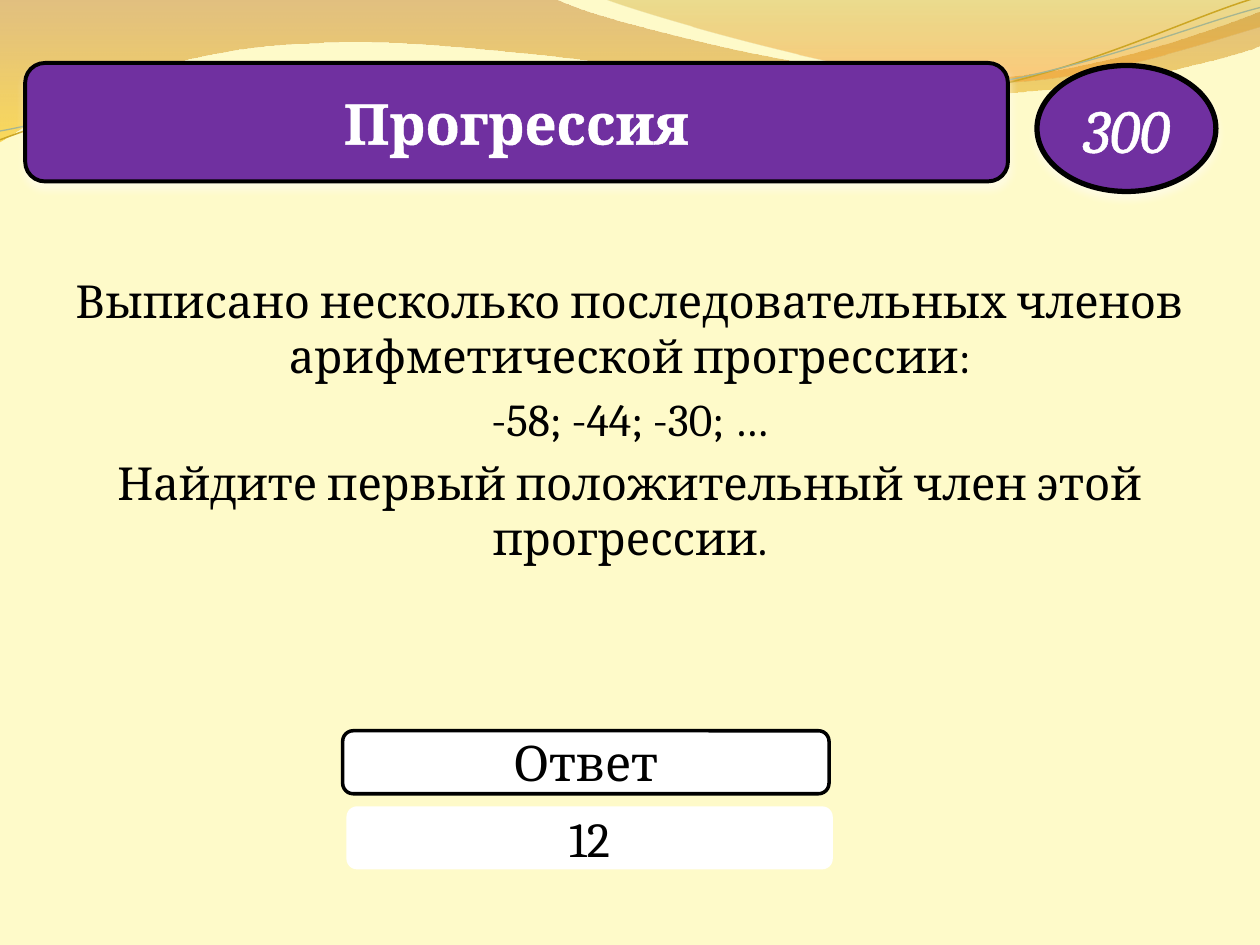
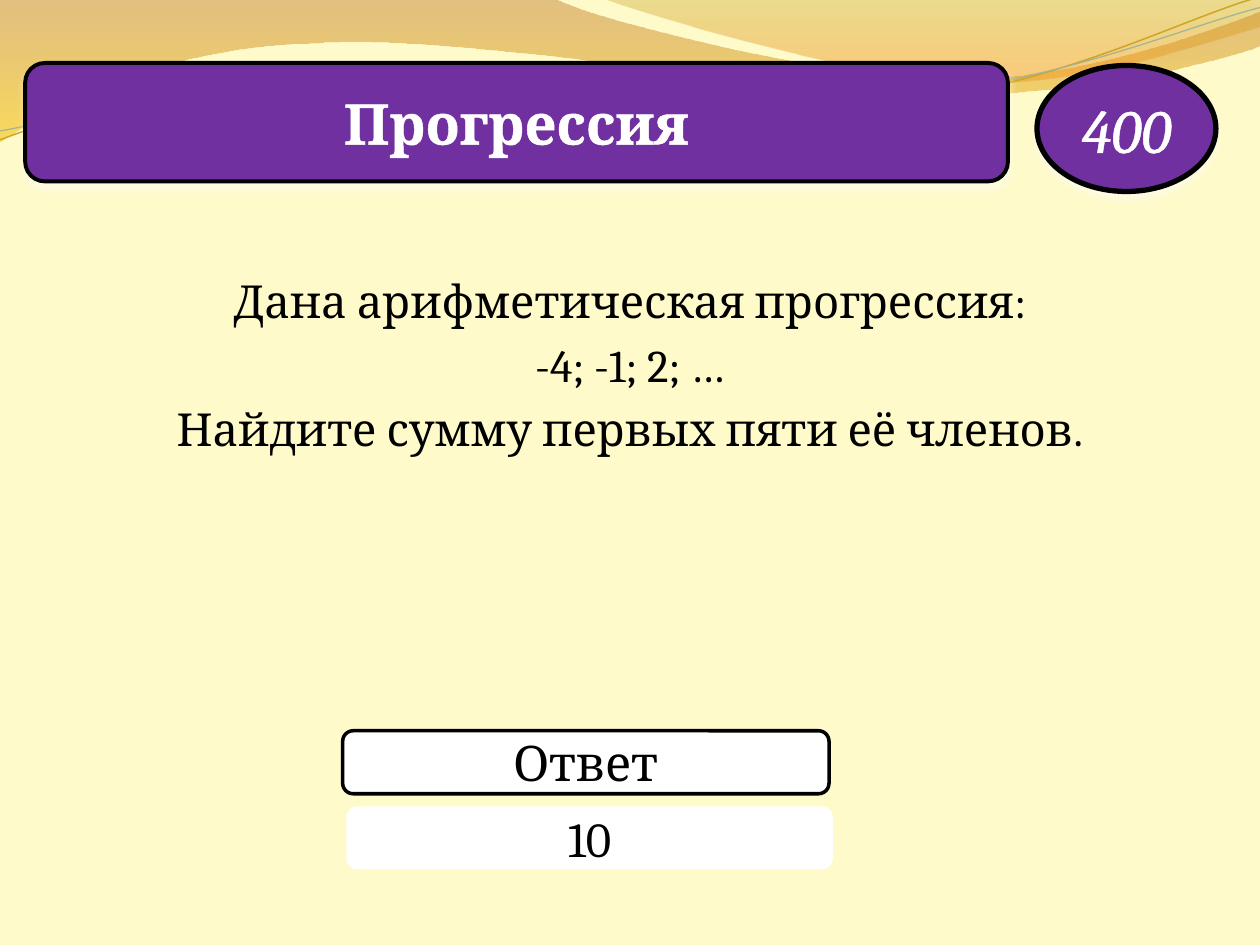
"""Builds two quiz slides about arithmetic progressions."""
from lxml import etree
from pptx import Presentation
from pptx.dml.color import RGBColor
from pptx.enum.shapes import MSO_SHAPE
from pptx.enum.text import MSO_ANCHOR, PP_ALIGN
from pptx.oxml.ns import qn
from pptx.util import Emu, Pt

PX = 9144
ROUNDED, ELLIPSE = MSO_SHAPE.ROUNDED_RECTANGLE, MSO_SHAPE.OVAL
CENTER, TOP, MIDDLE = PP_ALIGN.CENTER, MSO_ANCHOR.TOP, MSO_ANCHOR.MIDDLE
FONT = "Cambria"

COLORS = {
    "page": "FEFAC9", "purple": "7030A0", "white": "FFFFFF", "black": "000000",
    "brown": "C07A28", "yellow": "F7BF00", "olive": "C09709", "orange": "F59320",
    "gold": "CCA624", "sage": "A5B592",
}

TOPIC = "Прогрессия"
ANSWER_LABEL = "Ответ"
QUESTIONS = [
    {"points": "300", "answer": "12", "task": [
        "Выписано несколько последовательных членов арифметической прогрессии:",
        "-58; -44; -30; …",
        "Найдите первый положительный член этой прогрессии."]},
    {"points": "400", "answer": "10", "task": [
        "Дана арифметическая прогрессия:",
        "-4; -1; 2; …",
        "Найдите сумму первых пяти её членов."]},
]

TASK_BOX = (50, 212, 900, 480)
TOPIC_BOX = (20, 50, 780, 94)
POINTS_BOX = (823, 52, 142, 100)
LABEL_BOX = (272, 580, 386, 50)
ANSWER_BOX = (275, 640, 386, 50)

WAVES = [
    {"start": (0, 0),
     "segments": [(440, -1), (476, 17, 664, 63, 758, 63), (853, 63, 958, 26, 1000, 9),
                  (1001, 36), (983, 44, 870, 76, 746, 75), (622, 75, 382, 28, 257, 34),
                  (129, 36, 46, 83, -1, 113), (0, 0)],
     "stops": [(0, "brown", 45), (100, "yellow", 55)]},
    {"start": (479, -1),
     "segments": [(509, 11, 682, 62, 769, 65), (856, 69, 961, 32, 1000, 21), (1000, 0),
                  (479, -1)],
     "stops": [(0, "olive", 30), (80, "orange", 45)]},
]
STRANDS = [
    {"start": (0, 111), "color": "gold", "width": 0.85,
     "segments": [(48, 93, 158, 57, 277, 52), (395, 47, 593, 89, 713, 80),
                  (833, 71, 938, 15, 998, -2)]},
    {"start": (0, 104), "color": "sage", "width": 0.75,
     "segments": [(47, 96, 164, 61, 283, 56), (403, 51, 597, 84, 717, 75),
                  (836, 67, 941, 21, 1000, 6)]},
]


def rgb(name):
    return RGBColor.from_string(COLORS[name])


def emu(lengths):
    return [Emu(length * PX) for length in lengths]


def add_alpha(color_element, percent):
    etree.SubElement(color_element, qn("a:alpha"), val=str(percent * 1000))


def add_color(parent, name):
    return etree.SubElement(parent, qn("a:srgbClr"), val=COLORS[name])


def bend(outline, segments):
    corners = iter(list(outline.element.spPr.iter(qn("a:lnTo"))))
    for segment in segments:
        corner = next(corners)
        if len(segment) == 2:
            continue
        curve = etree.Element(qn("a:cubicBezTo"))
        corner.addprevious(curve)
        for handle in (corner, next(corners), next(corners)):
            curve.append(handle[0])
            handle.getparent().remove(handle)


def draw_outline(slide, part, close):
    segments = part["segments"]
    points = [segment[i:i + 2] for segment in segments for i in range(0, len(segment), 2)]
    builder = slide.shapes.build_freeform(*part["start"], scale=PX)
    builder.add_line_segments(points, close=close)
    outline = builder.convert_to_shape()
    bend(outline, segments)
    outline.shadow.inherit = False
    return outline


def draw_wave(slide, wave):
    band = draw_outline(slide, wave, True)
    band.line.fill.background()
    band.fill.gradient()
    band.fill.gradient_angle = 270
    for stop, (position, color, _) in zip(band.fill.gradient_stops, wave["stops"]):
        stop.position = position / 100
        stop.color.rgb = rgb(color)
    tints = band.element.spPr.iter(qn("a:srgbClr"))
    for tint, (_, _, opacity) in zip(list(tints), wave["stops"]):
        add_alpha(tint, opacity)


def draw_strand(slide, strand):
    thread = draw_outline(slide, strand, False)
    thread.fill.background()
    thread.line.color.rgb = rgb(strand["color"])
    thread.line.width = Pt(strand["width"])


def write(frame, *paragraphs, size, color="black", bold=False, italic=False,
          anchor=MIDDLE, space_before=0, outline=0):
    frame.word_wrap = True
    frame.vertical_anchor = anchor
    for index, text in enumerate(paragraphs):
        paragraph = frame.add_paragraph() if index else frame.paragraphs[0]
        paragraph.alignment = CENTER
        paragraph.space_before = Pt(space_before if index else 0)
        run = paragraph.add_run()
        run.text = text
        font = run.font
        font.name, font.size, font.bold, font.italic = FONT, Pt(size), bold, italic
        font.color.rgb = rgb(color)
        if outline:
            properties = run._r.get_or_add_rPr()
            edge = etree.Element(qn("a:ln"), w=str(Pt(outline)))
            add_color(etree.SubElement(edge, qn("a:solidFill")), color)
            properties.insert(0, edge)


def draw_plate(slide, kind, box, text, fill="white", border=0, shadow=False, **text_format):
    plate = slide.shapes.add_shape(kind, *emu(box))
    plate.fill.solid()
    plate.fill.fore_color.rgb = rgb(fill)
    if border:
        plate.line.color.rgb = rgb("black")
        plate.line.width = Pt(border)
    else:
        plate.line.fill.background()
    plate.shadow.inherit = False
    if shadow:
        effects = plate.element.spPr.find(qn("a:effectLst"))
        glow = etree.SubElement(effects, qn("a:outerShdw"), blurRad=str(Pt(4.5)),
                                dist=str(Pt(3)), dir="5400000", rotWithShape="0")
        add_alpha(add_color(glow, "white"), 48)
    write(plate.text_frame, text, **text_format)


def draw_question(slide, question):
    for wave in WAVES:
        draw_wave(slide, wave)
    for strand in STRANDS:
        draw_strand(slide, strand)
    task = slide.shapes.add_textbox(*emu(TASK_BOX))
    write(task.text_frame, *question["task"], size=26, anchor=TOP, space_before=5.2)
    draw_plate(slide, ROUNDED, ANSWER_BOX, question["answer"], size=28)
    draw_plate(slide, ROUNDED, TOPIC_BOX, TOPIC, fill="purple", border=2.25, shadow=True,
               size=32, color="white", bold=True, outline=1.45)
    draw_plate(slide, ELLIPSE, POINTS_BOX, question["points"], fill="purple", border=3,
               shadow=True, size=35, color="white", italic=True, outline=0.75)
    draw_plate(slide, ROUNDED, LABEL_BOX, ANSWER_LABEL, border=2, size=28)


def main():
    deck = Presentation()
    deck.slide_width, deck.slide_height = emu((1000, 750))
    background = deck.slide_master.background.fill
    background.solid()
    background.fore_color.rgb = rgb("page")
    for question in QUESTIONS:
        draw_question(deck.slides.add_slide(deck.slide_layouts[6]), question)
    deck.save("out.pptx")


if __name__ == "__main__":
    main()
